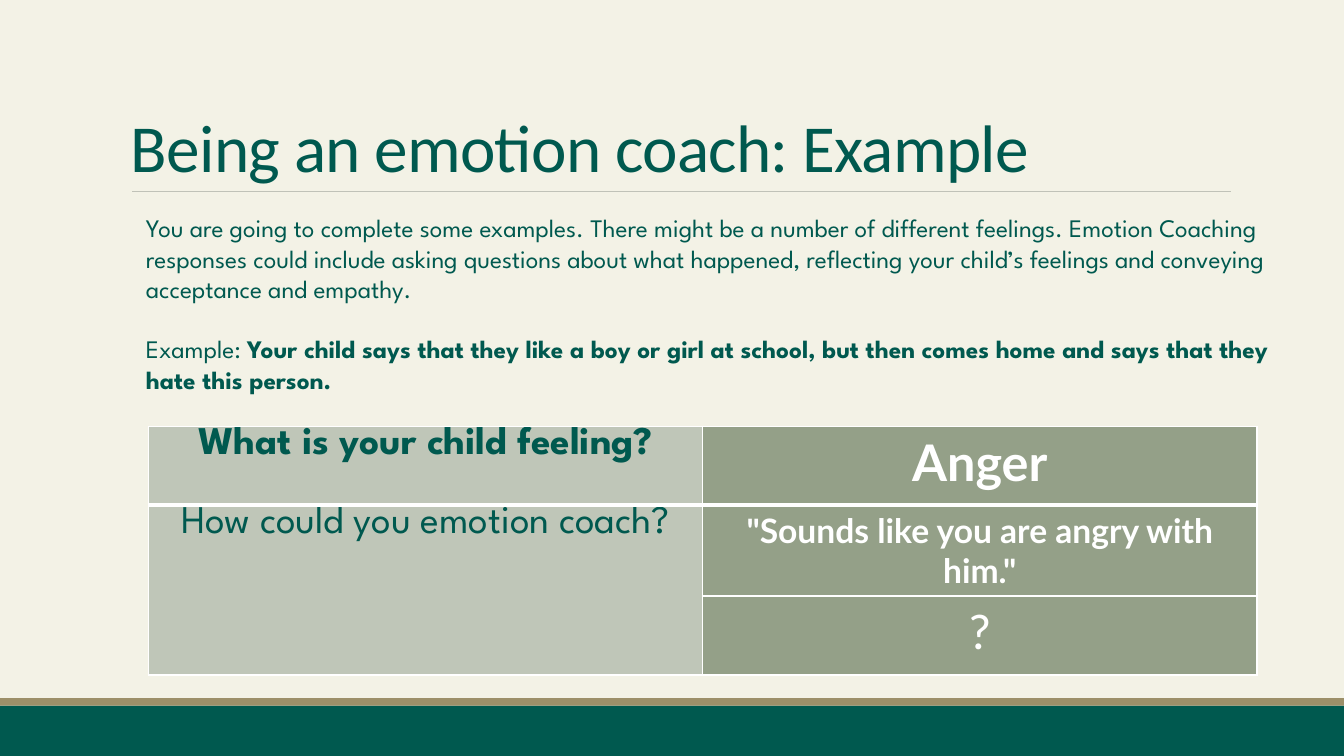
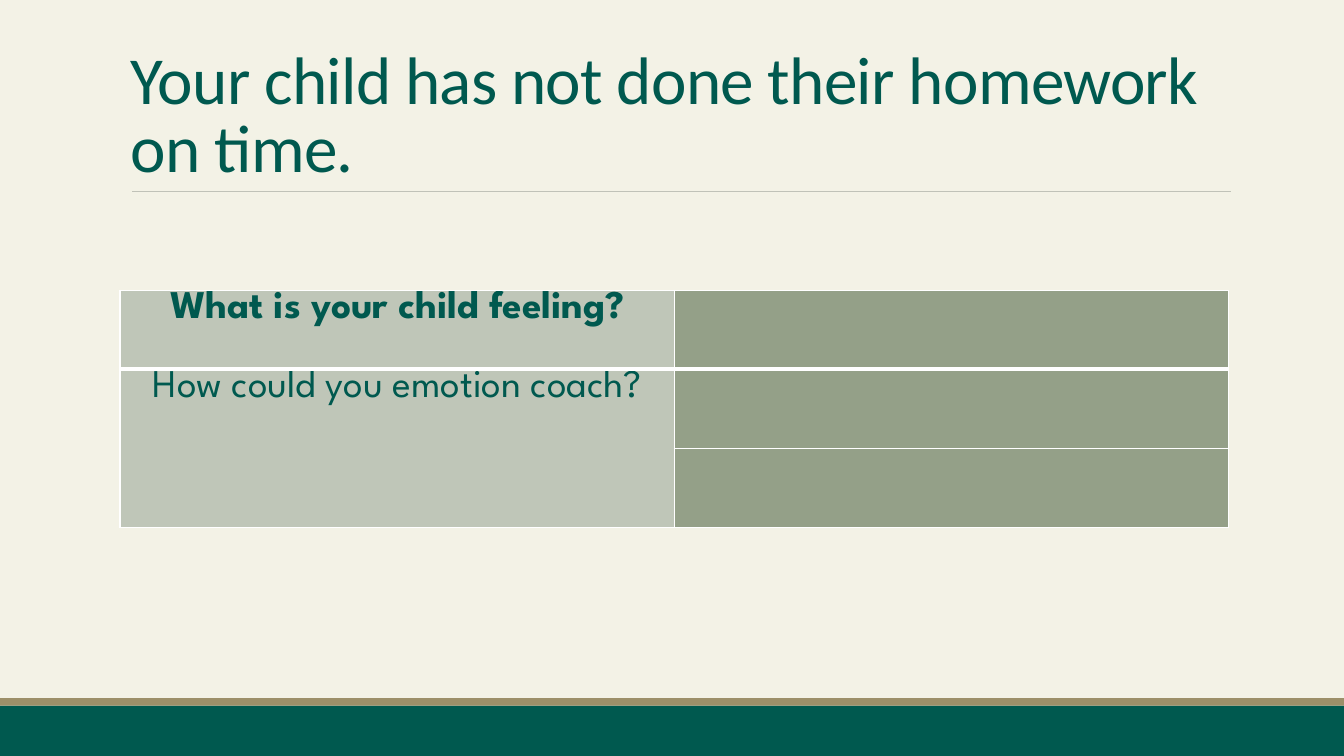
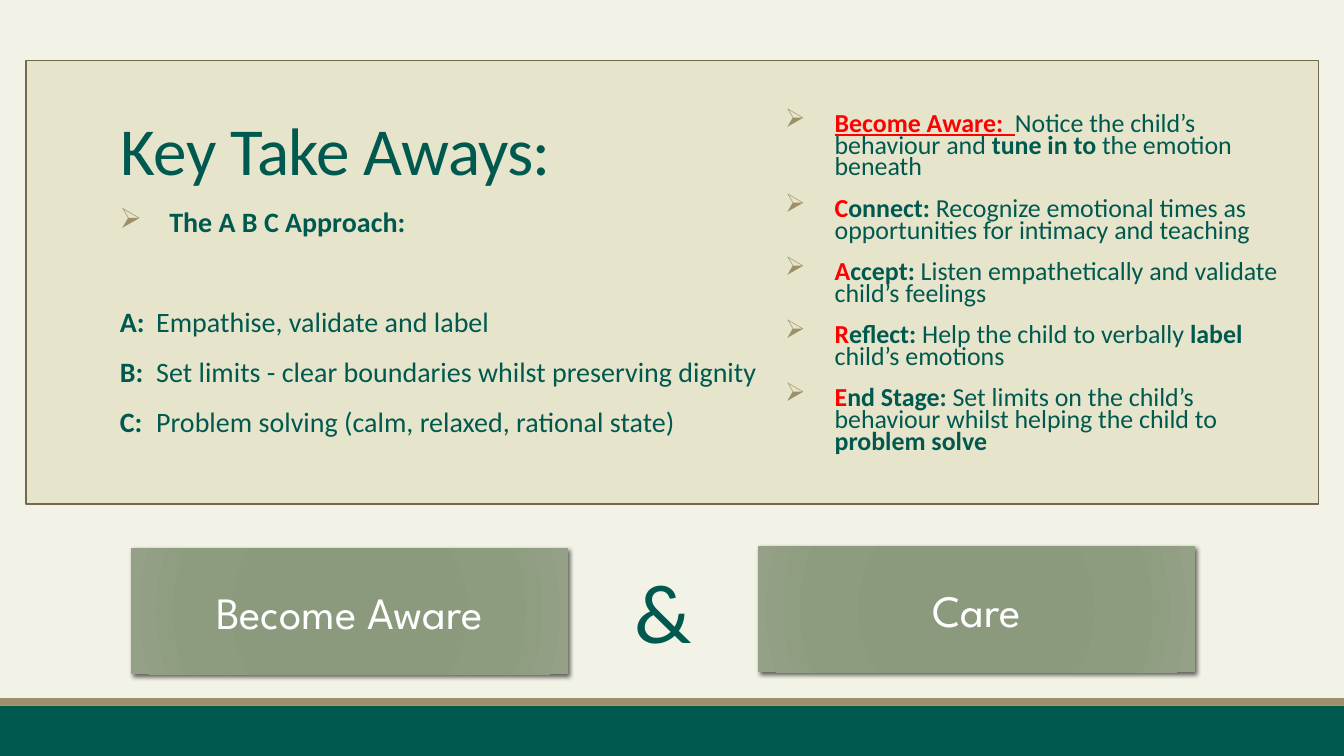
from lxml.etree import SubElement
from pptx import Presentation
from pptx.dml.color import RGBColor
from pptx.enum.shapes import MSO_CONNECTOR, MSO_SHAPE
from pptx.enum.text import MSO_ANCHOR, PP_ALIGN
from pptx.oxml import parse_xml
from pptx.oxml.ns import nsdecls, qn
from pptx.util import Emu, Pt

GREEN = RGBColor(0x00, 0x59, 0x4F)
TAN = RGBColor(0x9C, 0x8F, 0x69)
CREAM = RGBColor(0xF3, 0xF2, 0xE6)
SAND = RGBColor(0xE7, 0xE4, 0xCC)
BROWN = RGBColor(0x73, 0x6A, 0x4E)
PALE_SAGE = RGBColor(0xBF, 0xC6, 0xB8)
SAGE = RGBColor(0x94, 0xA0, 0x88)
RULE_GREY = RGBColor(0xC0, 0xC2, 0xB8)
RED = RGBColor(0xFF, 0x00, 0x00)
WHITE = RGBColor(0xFF, 0xFF, 0xFF)
BUTTON_STOPS = [(0, "8A987B"), (34, "8B997D"), (70, "8D9C7E"), (100, "94A187")]

BODY_FONT = "Calibri"
ACCENT_FONT = "League Spartan"
ANSWER_FONT = "Lato"
COLUMNS, ROWS = 160, 90
CELL = Emu(76200)


def grid(*cells):
    """Turn grid columns or rows into slide lengths."""
    return [Emu(round(count * CELL)) for count in cells]


class CoachDeck:
    """Holds the deck style and the current slide, one method per element."""

    def __init__(self):
        """Start an empty deck with the shared background."""
        self.deck = Presentation()
        self.deck.slide_width, self.deck.slide_height = grid(COLUMNS, ROWS)
        fill = self.deck.slide_master.background.fill
        fill.solid()
        fill.fore_color.rgb = CREAM
        self.page = None

    def new_page(self):
        """Add a blank slide with the footer bands."""
        self.page = self.deck.slides.add_slide(self.deck.slide_layouts[6])
        self.block(0, 84, COLUMNS, 6, GREEN)
        self.block(0, 83.12, COLUMNS, 0.88, TAN)

    def block(self, left, top, width, height, color, outline=None):
        """Draw a flat rectangle."""
        box = self.page.shapes.add_shape(
            MSO_SHAPE.RECTANGLE, *grid(left, top, width, height))
        box.shadow.inherit = False
        box.fill.solid()
        box.fill.fore_color.rgb = color
        if outline is None:
            box.line.fill.background()
        else:
            box.line.color.rgb = outline
            box.line.width = Pt(1.25)
        return box

    def style(self, span, size, color=GREEN, font=BODY_FONT, bold=False, underline=False):
        """Format one run."""
        span.font.name = font
        span.font.size = Pt(size)
        span.font.color.rgb = color
        span.font.bold = bold
        span.font.underline = underline

    def text(self, left, top, width, height, paragraphs, size, font=BODY_FONT, side=1.2):
        """Add a text box; each paragraph is a list of (text, style) spans."""
        box = self.page.shapes.add_textbox(*grid(left, top, width, height))
        frame = box.text_frame
        frame.word_wrap = True
        frame.margin_left, frame.margin_right = grid(side, side)
        for index, spans in enumerate(paragraphs):
            para = frame.paragraphs[0] if index == 0 else frame.add_paragraph()
            for words, look in spans:
                span = para.add_run()
                span.text = words
                self.style(span, size, font=font, **look)
        return frame

    def title(self, words, left=14.4, top=3.72, width=132):
        """Add the slide title, resting on its lower edge."""
        frame = self.text(left, top, width, 19.08, [[(words, {})]], 48)
        frame.vertical_anchor = MSO_ANCHOR.BOTTOM
        para = frame.paragraphs[0]
        para.line_spacing = 0.85
        para.runs[0]._r.get_or_add_rPr().set("spc", "-50")

    def rule(self):
        """Draw the hairline below the title."""
        line = self.page.shapes.add_connector(
            MSO_CONNECTOR.STRAIGHT, *grid(15.72, 22.8, 146.52, 22.8))
        line.line.color.rgb = RULE_GREY
        line.line.width = Pt(0.5)
        SubElement(line._element.spPr, qn("a:effectLst"))

    def space(self, para, line_spacing, before=12):
        """Set the spacing of a list paragraph."""
        para.line_spacing = line_spacing
        para.space_before = Pt(before)
        para.space_after = Pt(2)

    def hang(self, para, indent, bullet=False):
        """Give a paragraph a hanging indent and perhaps an arrow bullet."""
        properties = para._p.get_or_add_pPr()
        width = grid(indent)[0]
        properties.set("marL", str(width))
        properties.set("indent", str(-width))
        if bullet:
            color = SubElement(properties, qn("a:buClr"))
            SubElement(color, qn("a:srgbClr"), val=str(TAN))
            SubElement(properties, qn("a:buChar"), char="➢")

    def borders(self, cell, **widths):
        """Draw white cell borders, given in points by side."""
        properties = cell._tc.get_or_add_tcPr()
        for side in "LRTB":
            width = Pt(widths.get(side, 1))
            properties.append(parse_xml(
                f'<a:ln{side} {nsdecls("a")} w="{width}"><a:solidFill>'
                f'<a:srgbClr val="{WHITE}"/></a:solidFill></a:ln{side}>'))

    def coaching_table(self, left, top, answers=()):
        """Add the feeling and coaching table with its answers."""
        row_height = 9.4
        table = self.page.shapes.add_table(
            3, 2, *grid(left, top, 132, 3 * row_height)).table
        table.horz_banding = False
        for row_index, row in enumerate(table.rows):
            row.height = grid(row_height)[0]
            for column_index, cell in enumerate(row.cells):
                self.borders(cell, B=3 if row_index == 0 else 1,
                             T=3 if row_index == 1 else 1)
                cell.fill.solid()
                cell.fill.fore_color.rgb = SAGE if column_index else PALE_SAGE
        table.cell(1, 0).merge(table.cell(2, 0))
        questions = ["What is your child feeling?", "How could you emotion coach?"]
        for row_index, question in enumerate(questions):
            cell = table.cell(row_index, 0)
            cell.margin_top = grid(0.1)[0]
            self.cell_text(cell, question, 28, font=ACCENT_FONT, bold=row_index == 0)
        for row_index, (answer, size, font, bold) in enumerate(answers):
            self.cell_text(table.cell(row_index, 1), answer, size, WHITE, font, bold)

    def cell_text(self, cell, words, *look, **more_look):
        """Write centred text in a table cell."""
        cell.text_frame.text = words
        para = cell.text_frame.paragraphs[0]
        para.alignment = PP_ALIGN.CENTER
        self.style(para.runs[0], *look, **more_look)

    def button(self, left, top, words):
        """Draw a shaded button with a soft shadow and a label."""
        box = self.block(left, top, 52, 15, SAGE)
        properties = box._element.spPr
        stops = "".join(
            f'<a:gs pos="{place * 1000}"><a:srgbClr val="{color}"/></a:gs>'
            for place, color in BUTTON_STOPS)
        gradient = parse_xml(
            f'<a:gradFill {nsdecls("a")}><a:gsLst>{stops}</a:gsLst><a:path path="circle">'
            '<a:fillToRect l="50000" t="50000" r="50000" b="50000"/></a:path></a:gradFill>')
        properties.replace(properties.find(qn("a:solidFill")), gradient)
        shadow = parse_xml(
            f'<a:effectLst {nsdecls("a")}><a:outerShdw blurRad="{Pt(3.5)}" dist="{Pt(2)}" '
            'dir="2700000" rotWithShape="0"><a:srgbClr val="000000"><a:alpha val="60000"/>'
            '</a:srgbClr></a:outerShdw></a:effectLst>')
        properties.replace(properties.find(qn("a:effectLst")), shadow)
        frame = box.text_frame
        frame.text = words
        frame.vertical_anchor = MSO_ANCHOR.MIDDLE
        frame.paragraphs[0].alignment = PP_ALIGN.CENTER
        self.style(frame.paragraphs[0].runs[0], 32, WHITE, ACCENT_FONT)


def example_page(show):
    """Build the worked example."""
    show.new_page()
    show.rule()
    show.title("Being an emotion coach: Example")
    frame = show.text(16.2, 24.72, 136.32, 23.04, [
        [("You are going to complete some examples. There might be a number of different "
          "feelings. Emotion Coaching responses could include asking questions about what "
          "happened, reflecting your child’s feelings and conveying acceptance and empathy.", {})],
        [("Example: ", {}),
         ("Your child says that they like a boy or girl at school, but then comes home "
          "and says that they hate this person.", {"bold": True})],
    ], 18, ACCENT_FONT)
    frame.paragraphs[1].space_before = Pt(21.7)
    show.coaching_table(17.64, 50.76, [
        ("Anger", 36, ANSWER_FONT, True),
        ('"Sounds like you are angry with him."', 24, ANSWER_FONT, True),
        ("?", 36, BODY_FONT, False),
    ])


def homework_page(show):
    """Build the homework exercise."""
    show.new_page()
    show.rule()
    show.title("Your child has not done their homework on time.")
    show.coaching_table(14.28, 34.56)


def takeaways_page(show):
    """Build the summary of the approach."""
    bold, red = {"bold": True}, {"bold": True, "color": RED}
    show.new_page()
    show.block(3.12, 7.2, 153.84, 52.8, SAND, BROWN)
    show.button(15.6, 65.28, "Become Aware")
    show.button(90.24, 65.04, "Care")
    show.text(74.4, 66, 13.92, 13.32, [[("&", {})]], 60)
    steps = show.text(93.48, 13.08, 60.24, 45.72, [
        [("Become Aware:  ", {**red, "underline": True}),
         ("Notice the child’s behaviour and ", {}), ("tune in to", bold),
         (" the emotion beneath", {})],
        [("C", red), ("onnect:", bold),
         (" Recognize emotional times as opportunities for intimacy and teaching", {})],
        [("A", red), ("ccept: ", bold),
         ("Listen empathetically and validate child’s feelings", {})],
        [("R", red), ("eflect: ", bold), ("Help the child to verbally ", {}),
         ("label", bold), (" child’s emotions", {})],
        [("E", red), ("nd Stage:", bold),
         (" Set limits on the child’s behaviour whilst helping the child to ", {}),
         ("problem solve", bold)],
    ], 18.5, side=0)
    for para in steps.paragraphs:
        show.space(para, 0.7)
        show.hang(para, 5.88, bullet=True)
    show.title("Key Take Aways:", 13.2, 4.08, 129.36)
    approach = show.text(14.28, 24.24, 78, 32.16, [
        [("The A B C Approach:", bold)],
        [("A:\t", bold), ("Empathise, validate and label", {})],
        [("B:\t", bold), ("Set limits - clear boundaries whilst preserving dignity", {})],
        [("C:\t", bold), ("Problem solving (calm, relaxed, rational state)", {})],
    ], 20, side=0)
    for index, para in enumerate(approach.paragraphs):
        show.space(para, 0.9, before=47.7 if index == 1 else 12)
        show.hang(para, 4.32 if index else 5.88, bullet=index == 0)


def main():
    """Build the deck and save it."""
    show = CoachDeck()
    example_page(show)
    homework_page(show)
    takeaways_page(show)
    show.deck.save("out.pptx")


if __name__ == "__main__":
    main()
